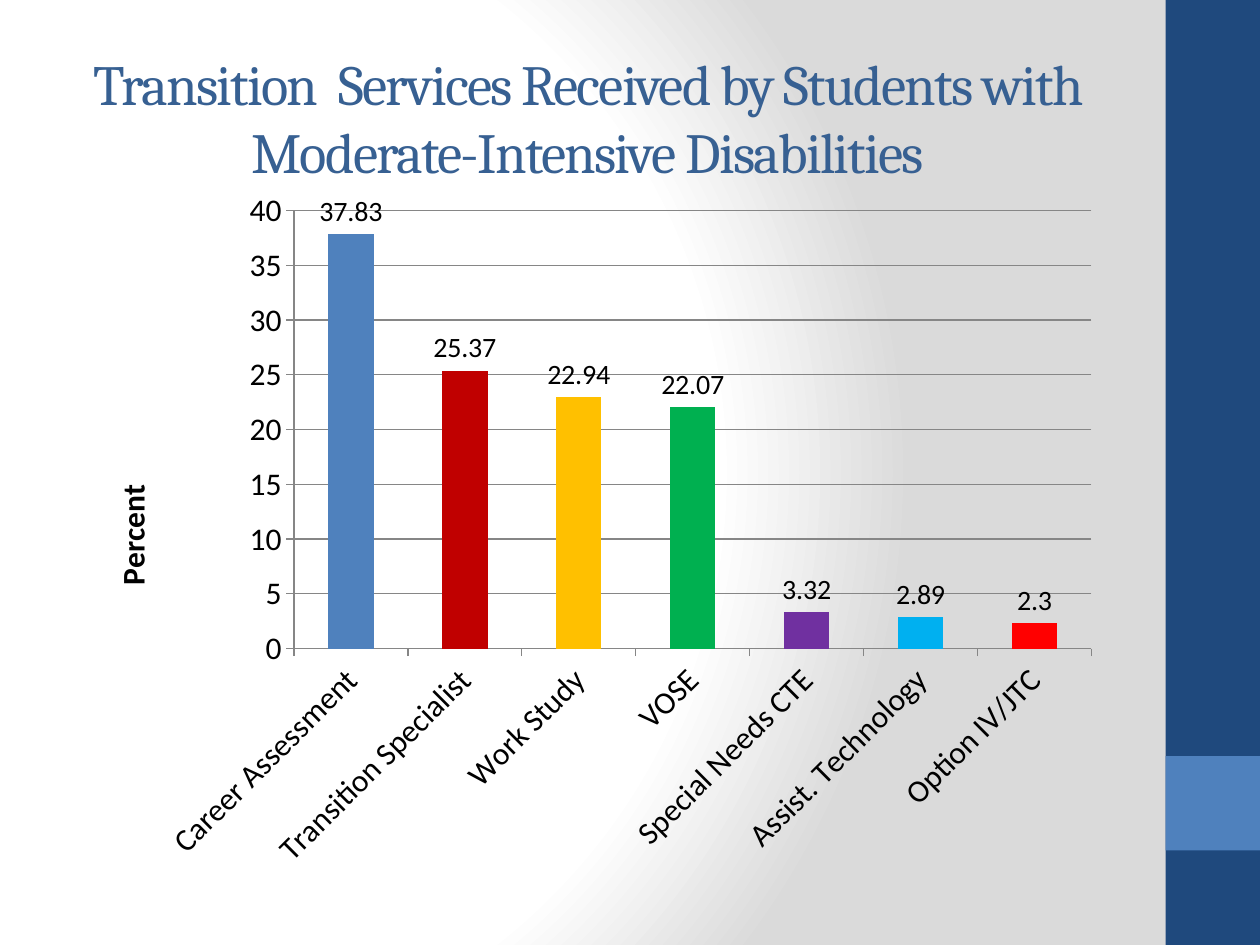
from pptx import Presentation
from pptx.chart.data import CategoryChartData
from pptx.dml.color import RGBColor
from pptx.enum.chart import XL_CHART_TYPE, XL_LABEL_POSITION, XL_TICK_MARK
from pptx.enum.shapes import MSO_SHAPE
from pptx.enum.text import MSO_ANCHOR, MSO_AUTO_SIZE, PP_ALIGN
from pptx.oxml import parse_xml
from pptx.oxml.ns import nsdecls, qn
from pptx.util import Inches, Pt

COLUMN = XL_CHART_TYPE.COLUMN_CLUSTERED
OUTSIDE_END = XL_LABEL_POSITION.OUTSIDE_END
TICK_OUTSIDE = XL_TICK_MARK.OUTSIDE
TITLE_ONLY = 5

NAVY = RGBColor(0x1F, 0x49, 0x7D)
BLUE = RGBColor(0x4F, 0x81, 0xBD)
TITLE_BLUE = RGBColor(0x37, 0x60, 0x92)
BLACK = RGBColor(0, 0, 0)
GRAY = RGBColor(0x86, 0x86, 0x86)
DARK_RED = RGBColor(0xC0, 0, 0)
AMBER = RGBColor(0xFF, 0xC0, 0)
GREEN = RGBColor(0, 0xB0, 0x50)
PURPLE = RGBColor(0x70, 0x30, 0xA0)
SKY = RGBColor(0, 0xB0, 0xF0)
RED = RGBColor(0xFF, 0, 0)

SERVICES = [
    ("Career Assessment", 37.83, BLUE),
    ("Transition Specialist", 25.37, DARK_RED),
    ("Work Study", 22.94, AMBER),
    ("VOSE", 22.07, GREEN),
    ("Special Needs CTE", 3.32, PURPLE),
    ("Assist. Technology", 2.89, SKY),
    ("Option IV/JTC", 2.3, RED),
]


def set_layout(parent, index, target=None, **fractions):
    """Place a chart part by fractions of the chart's size."""
    for old_layout in parent.findall(qn("c:layout")):
        parent.remove(old_layout)
    target_xml = f'<c:layoutTarget val="{target}"/>' if target else ""
    modes = "".join(f'<c:{key}Mode val="edge"/>' for key in "xy")
    sizes = "".join(f'<c:{key} val="{value}"/>' for key, value in fractions.items())
    parent.insert(index, parse_xml(
        f'<c:layout {nsdecls("c")}><c:manualLayout>{target_xml}{modes}{sizes}'
        "</c:manualLayout></c:layout>"))


class SlideBuilder:
    title_font = "Cambria"
    body_font = "Calibri"

    def __init__(self, presentation):
        self.slide = presentation.slides.add_slide(presentation.slide_layouts[TITLE_ONLY])

    def background(self, stops):
        """Fill the background with a circular gradient of (percent, colour) stops."""
        stops_xml = "".join(
            f'<a:gs pos="{percent * 1000}"><a:srgbClr val="{color}"/></a:gs>'
            for percent, color in stops)
        self.slide.element.cSld.insert(0, parse_xml(
            f'<p:bg {nsdecls("p", "a")}><p:bgPr><a:gradFill rotWithShape="1">'
            f'<a:gsLst>{stops_xml}</a:gsLst><a:path path="circle">'
            '<a:fillToRect l="20000" t="50000" r="100000" b="50000"/></a:path>'
            "</a:gradFill><a:effectLst/></p:bgPr></p:bg>"))

    def rectangle(self, left, top, width, height, color):
        shape = self.slide.shapes.add_shape(
            MSO_SHAPE.RECTANGLE, Inches(left), Inches(top), Inches(width), Inches(height))
        shape.shadow.inherit = False
        shape.fill.solid()
        shape.fill.fore_color.rgb = color
        shape.line.fill.background()

    def title(self, text, left, top, width, height):
        title = self.slide.shapes.title
        title.left, title.top = Inches(left), Inches(top)
        title.width, title.height = Inches(width), Inches(height)
        frame = title.text_frame
        frame.text = text
        frame.word_wrap = True
        frame.auto_size = MSO_AUTO_SIZE.NONE
        frame.vertical_anchor = MSO_ANCHOR.MIDDLE
        paragraph = frame.paragraphs[0]
        paragraph.alignment = PP_ALIGN.CENTER
        paragraph.font.name = self.title_font
        paragraph.font.size = Pt(32.4)
        paragraph.font.color.rgb = TITLE_BLUE
        paragraph.runs[0]._r.get_or_add_rPr().set("spc", "-100")

    def column_chart(self, rows, axis_title, left, top, width, height):
        names, values, colors = zip(*rows)
        data = CategoryChartData()
        data.categories = names
        data.add_series("Series 1", values)
        chart = self.slide.shapes.add_chart(
            COLUMN, Inches(left), Inches(top), Inches(width), Inches(height), data).chart
        chart.has_legend = False
        chart.has_title = False
        chart.font.name = self.body_font
        chart.font.size = Pt(18)
        chart.font.color.rgb = BLACK
        self.format_columns(chart.plots[0], colors)
        self.format_axes(chart, axis_title)
        set_layout(chart._chartSpace.chart.plotArea, 0, "inner",
                   x=0.22, y=0.05, w=0.76, h=0.62)

    def format_columns(self, plot, colors):
        plot.gap_width = 150
        plot.vary_by_categories = False
        series = plot.series[0]
        series.format.fill.solid()
        series.format.fill.fore_color.rgb = colors[0]
        for index, color in enumerate(colors[1:], start=1):
            fill = series.points[index].format.fill
            fill.solid()
            fill.fore_color.rgb = color
        labels = series.data_labels
        labels.show_value = True
        labels.position = OUTSIDE_END
        labels.font.name = self.body_font
        labels.font.size = Pt(16)
        labels.font.color.rgb = BLACK

    def format_axes(self, chart, axis_title):
        category_axis, value_axis = chart.category_axis, chart.value_axis
        for axis in (category_axis, value_axis):
            axis.major_tick_mark = TICK_OUTSIDE
            axis.format.line.color.rgb = GRAY
        category_axis.tick_labels.font.size = Pt(18)
        category_axis._element.txPr.bodyPr.set("rot", "-2700000")
        value_axis.minimum_scale, value_axis.maximum_scale = 0, 40
        value_axis.major_unit = 5
        value_axis.has_major_gridlines = True
        value_axis.major_gridlines.format.line.color.rgb = GRAY
        frame = value_axis.axis_title.text_frame
        frame.text = axis_title
        frame._txBody.bodyPr.set("rot", "-5400000")
        frame._txBody.bodyPr.set("vert", "horz")
        font = frame.paragraphs[0].font
        font.name = self.body_font
        font.size = Pt(18)
        font.bold = True
        font.color.rgb = BLACK
        set_layout(value_axis.axis_title._element, 1, x=0.04, y=0.43)


def main():
    presentation = Presentation()
    presentation.slide_width, presentation.slide_height = Inches(10), Inches(7.5)
    builder = SlideBuilder(presentation)
    builder.background([(0, "FFFFFF"), (75, "FFFFFF"), (100, "DADADA")])
    builder.rectangle(9.25, 0, 0.75, 7.5, NAVY)
    builder.rectangle(9.25, 6, 0.75, 0.75, BLUE)
    builder.title(
        "Transition  Services Received by Students with Moderate-Intensive Disabilities",
        0.5, 0.3, 8.33, 1.25)
    builder.column_chart(SERVICES, "Percent", 0.5, 1.39, 8.33, 5.61)
    presentation.save("out.pptx")


if __name__ == "__main__":
    main()
